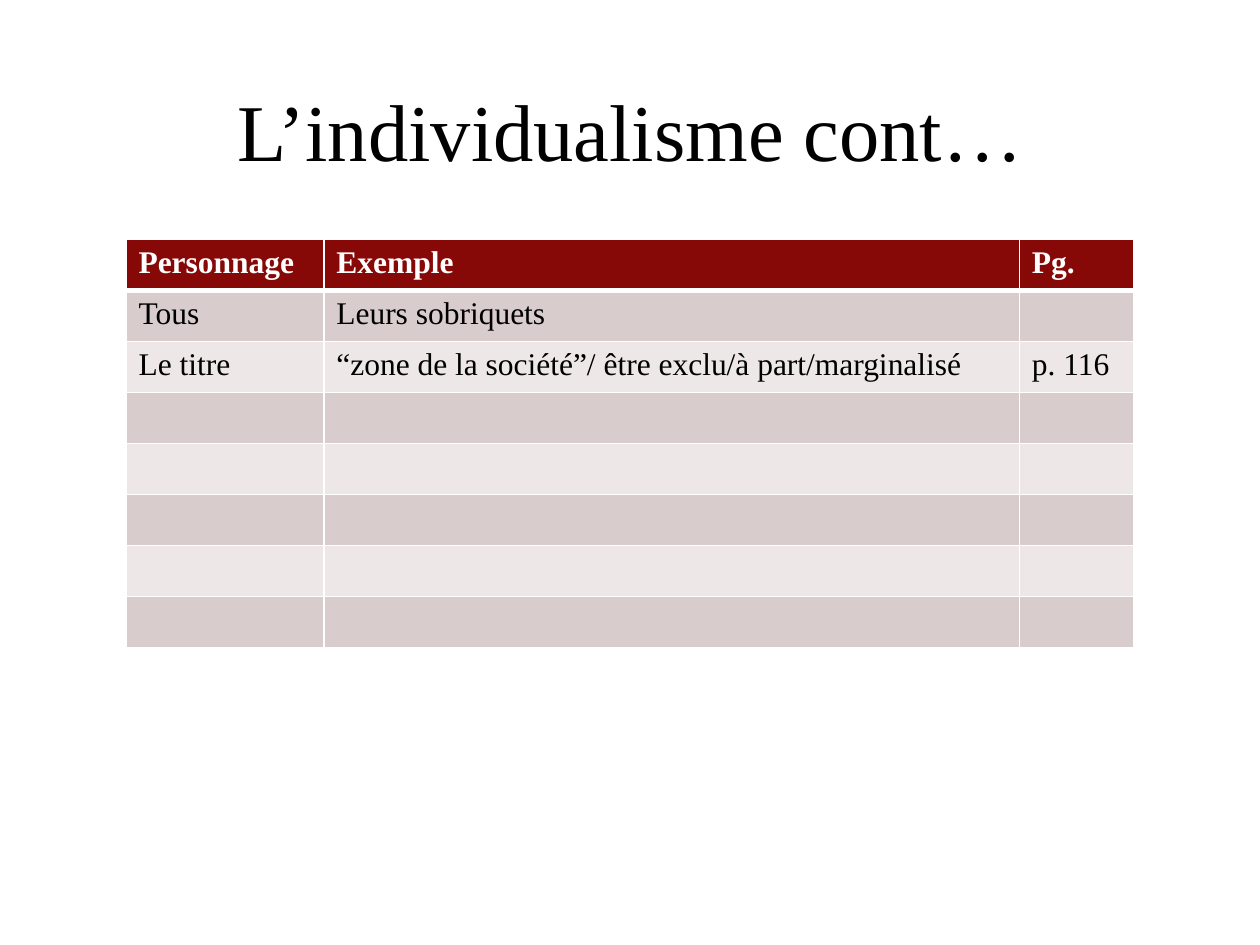
from lxml.etree import SubElement
from pptx import Presentation
from pptx.dml.color import RGBColor as RGB
from pptx.enum.text import MSO_ANCHOR as Anchor, PP_ALIGN as Align
from pptx.oxml.ns import qn
from pptx.util import Inches, Pt

COLORS = {"ink": "000000", "paper": "FFFFFF", "header": "860908",
          "dark_band": "D9CCCC", "light_band": "EDE7E7"}
FONT = "Times New Roman"


def style(font, size, color, bold=False):
    font.name, font.size, font.bold = FONT, Pt(size), bold
    font.color.rgb = RGB.from_string(COLORS[color])


def add_border(cell, side, points):
    line = SubElement(cell._tc.get_or_add_tcPr(), qn(f"a:ln{side}"), w=str(Pt(points)))
    fill = SubElement(line, qn("a:solidFill"))
    SubElement(fill, qn("a:srgbClr"), val=COLORS["paper"])


deck = Presentation()
deck.slide_width, deck.slide_height = Inches(10), Inches(7.5)
slide = deck.slides.add_slide(deck.slide_layouts[6])
margin = deck.slide_width // 10
content_width = deck.slide_width - 2 * margin

title = slide.shapes.add_textbox(margin, Inches(0.55), content_width, Inches(0.95)).text_frame
title.word_wrap = True
title.vertical_anchor = Anchor.MIDDLE
title.text = "L’individualisme cont…"
title.paragraphs[0].alignment = Align.CENTER
style(title.paragraphs[0].runs[0].font, 46, "ink")

entries = [
    ("Personnage", "Exemple", "Pg."),
    ("Tous", "Leurs sobriquets", ""),
    ("Le titre", "“zone de la société”/ être exclu/à part/marginalisé", "p. 116"),
] + [("", "", "")] * 5
column_widths = [1.57, 5.52, 0.91]

examples = slide.shapes.add_table(len(entries), len(column_widths), margin, Inches(1.9),
                                  content_width, Inches(3.24)).table
for column, width in zip(examples.columns, column_widths):
    column.width = Inches(width)

for row, entry in enumerate(entries):
    is_header = row == 0
    band = "header" if is_header else "dark_band" if row % 2 else "light_band"
    for col, words in enumerate(entry):
        cell = examples.cell(row, col)
        for side in "LRTB":
            thick = (is_header and side == "B") or (row == 1 and side == "T")
            add_border(cell, side, 3 if thick else 1)
        cell.fill.solid()
        cell.fill.fore_color.rgb = RGB.from_string(COLORS[band])
        paragraph = cell.text_frame.paragraphs[0]
        paragraph.text = words
        for run in paragraph.runs:
            style(run.font, 18, "paper" if is_header else "ink", is_header)

deck.save("out.pptx")
